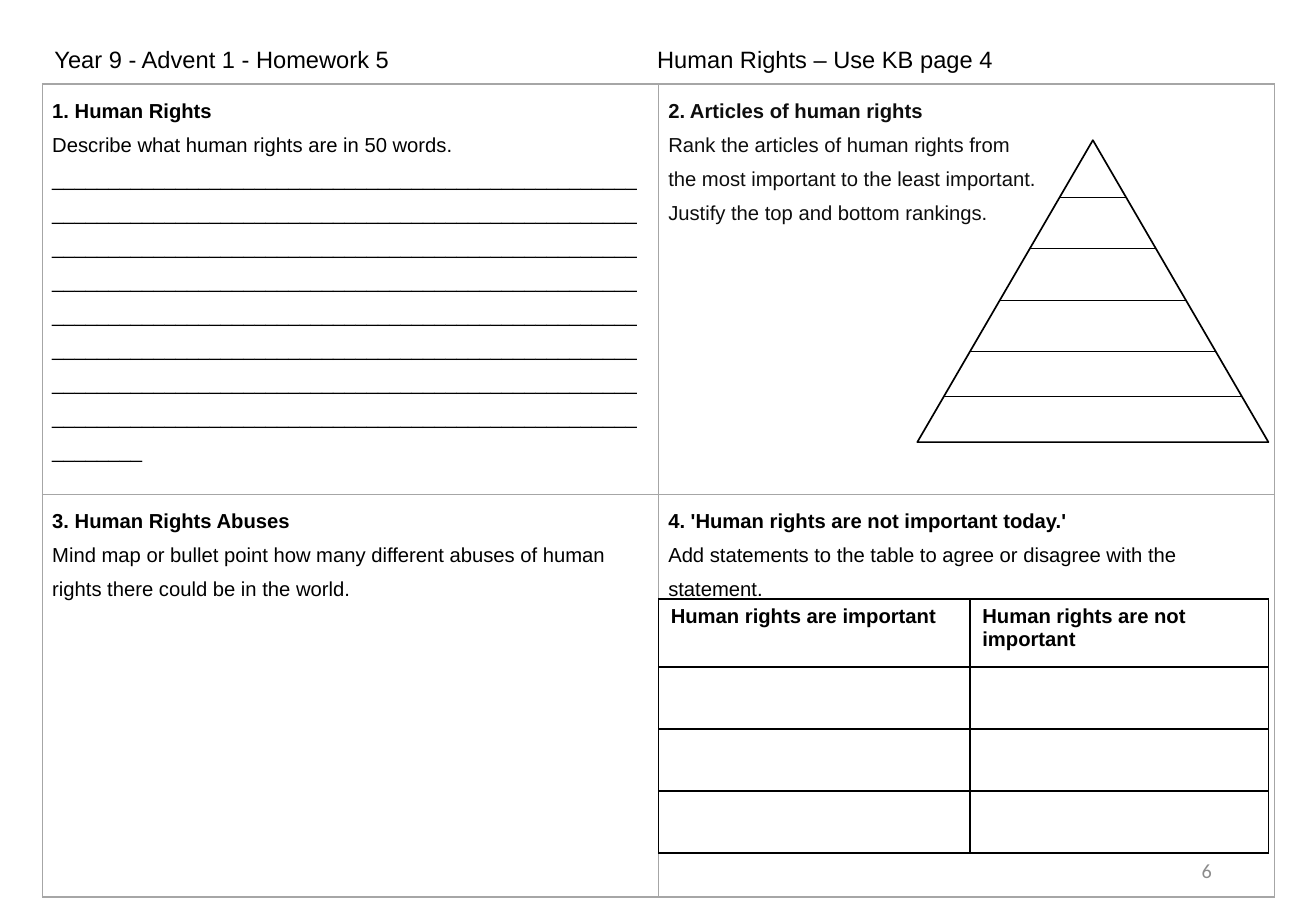
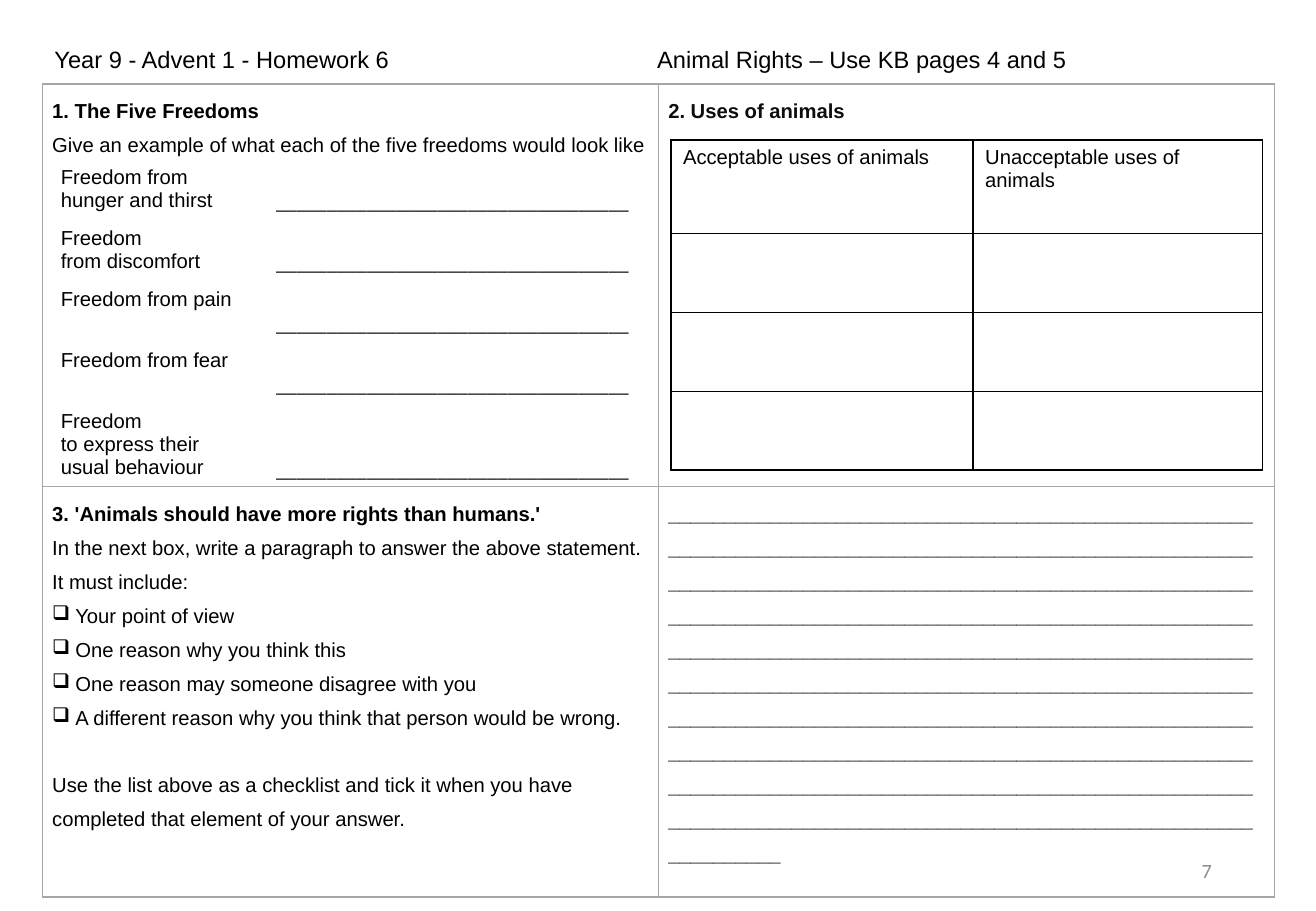
"""Builds two homework sheets, each a two-by-two grid of tasks."""
from lxml import etree
from pptx import Presentation
from pptx import util as u
from pptx.dml.color import RGBColor
from pptx.enum import shapes, text
from pptx.oxml.ns import qn

PAGE_W, PAGE_H = 10.83, 7.5
SHEET = (0.35, 0.69, 10.14, 6.63)
BLACK, INK, WHITE, GRID, MUTED = "000000", "0D0D0D", "FFFFFF", "A6A6A6", "8C8C8C"
NO_STYLE = "{2D5ABB26-0587-4C30-8999-92F81FD0307C}"
NBSP = chr(160)
TASK_MARGINS = (0.08, 0.04)


def rgb(value):
    """Turn a hex string into a colour."""
    return RGBColor.from_string(value)


def inches(*lengths):
    """Turn numbers into slide lengths."""
    return [u.Inches(length) for length in lengths]


def part(box, x, y, w, h):
    """Return the box found at the given shares of another box."""
    left, top, width, height = box
    return left + x * width, top + y * height, w * width, h * height


def quarter(col, row):
    """Return one task box of the sheet."""
    return part(SHEET, col / 2, row / 2, 0.5, 0.5)


def add_child(parent, tag, **attributes):
    """Append one DrawingML element."""
    child = etree.SubElement(parent, qn(tag))
    for key, value in attributes.items():
        child.set(key, str(value))
    return child


def write(frame, content, size=12, font="Arial", color=BLACK, bold=False, spacing=None,
          align=None, before=0, bullet=None, tab=None):
    """Add one formatted paragraph to a text frame."""
    para = frame.paragraphs[0]
    if para.runs:
        para = frame.add_paragraph()
    para.alignment = align
    para.line_spacing = spacing
    if before:
        para.space_before = u.Pt(before)
    props = para._p.get_or_add_pPr()
    if bullet:
        indent = u.Inches(0.19)
        props.set("marL", str(indent))
        props.set("indent", str(-indent))
        add_child(props, "a:buChar", char=bullet)
    if tab:
        stops = add_child(props, "a:tabLst")
        add_child(stops, "a:tab", pos=u.Inches(tab), algn="l")
    for index, line in enumerate(content.split("\n")):
        if index:
            para.add_line_break()
        run = para.add_run()
        run.text = line
        run.font.size = u.Pt(size)
        run.font.name = font
        run.font.bold = bold
        run.font.color.rgb = rgb(color)


def set_borders(cell, color):
    """Draw the four sides of a cell, or clear them when no colour is given."""
    props = cell._tc.get_or_add_tcPr()
    for index, side in enumerate(("a:lnL", "a:lnR", "a:lnT", "a:lnB")):
        line = add_child(props, side, w=u.Pt(1))
        props.insert(index, line)
        if color:
            add_child(add_child(line, "a:solidFill"), "a:srgbClr", val=color)
        else:
            add_child(line, "a:noFill")


def add_grid(slide, box, cols, rows, border=None, margins=(0.1, 0.05)):
    """Add an unfilled table whose columns and rows share the box by weight."""
    table = slide.shapes.add_table(len(rows), len(cols), *inches(*box)).table
    table.first_row = table.horz_banding = False
    table._tbl.tblPr[0].text = NO_STYLE
    for tracks, weights, field, length in ((table.columns, cols, "width", box[2]),
                                           (table.rows, rows, "height", box[3])):
        for track, weight in zip(tracks, weights):
            setattr(track, field, u.Inches(length * weight / sum(weights)))
    for cell in table.iter_cells():
        cell.margin_left = cell.margin_right = u.Inches(margins[0])
        cell.margin_top = cell.margin_bottom = u.Inches(margins[1])
        cell.fill.background()
        set_borders(cell, border)
    return table


def add_header(slide, box, homework, topic):
    """Add the white band with the homework name and its topic."""
    band = slide.shapes.add_shape(shapes.MSO_SHAPE.RECTANGLE, *inches(*box))
    band.shadow.inherit = False
    band.fill.solid()
    band.fill.fore_color.rgb = rgb(WHITE)
    band.line.fill.background()
    band.text_frame.word_wrap = True
    band.text_frame.vertical_anchor = text.MSO_ANCHOR.TOP
    write(band.text_frame, f"{homework}\t{topic}", size=14, spacing=1.5,
          align=text.PP_ALIGN.LEFT, tab=4.96)


def add_page_number(slide, box, number):
    """Add the page number at the foot of the sheet."""
    frame = slide.shapes.add_textbox(*inches(*box)).text_frame
    frame.word_wrap = True
    frame.vertical_anchor = text.MSO_ANCHOR.MIDDLE
    write(frame, str(number), font="Calibri", color=MUTED, align=text.PP_ALIGN.RIGHT)


def add_sheet(deck, number, homework, topic, tasks):
    """Add a slide with its header, page number and four tasks."""
    slide = deck.slides.add_slide(deck.slide_layouts[6])
    page = (0, 0, PAGE_W, PAGE_H)
    add_page_number(slide, part(page, 0.71, 0.93, 0.22, 0.05), number)
    add_header(slide, (SHEET[0], 0.2, 10.36, 0.44), homework, topic)
    table = add_grid(slide, SHEET, (1, 1), (1, 1), GRID, TASK_MARGINS)
    for cell, paragraphs in zip(table.iter_cells(), tasks):
        for content, style in paragraphs:
            write(cell.text_frame, content, spacing=1.5, **style)
    return slide


def add_pyramid(slide, box, levels):
    """Add a triangle cut by level lines at shares of its height."""
    left, top, width, height = box
    triangle = slide.shapes.add_shape(shapes.MSO_SHAPE.ISOSCELES_TRIANGLE, *inches(*box))
    triangle.shadow.inherit = False
    triangle.fill.solid()
    triangle.fill.fore_color.rgb = rgb(WHITE)
    triangle.line.color.rgb = rgb(BLACK)
    triangle.line.width = u.Pt(1)
    middle = left + width / 2
    for level in levels:
        reach, y = level * width / 2, top + level * height
        rung = slide.shapes.add_connector(shapes.MSO_CONNECTOR.STRAIGHT,
                                          *inches(middle - reach, y, middle + reach, y))
        rung.line.color.rgb = rgb(BLACK)
        rung.line.width = u.Pt(0.5)
        add_child(rung._element.spPr, "a:effectLst")


def add_answer_table(slide, box, headings, rows, bold=False):
    """Add a two-column table with headings and empty answer rows."""
    table = add_grid(slide, box, (2.57, 2.46), rows, BLACK)
    for col, heading in enumerate(headings):
        write(table.cell(0, col).text_frame, heading, bold=bold)


def add_freedoms(slide, box, freedoms):
    """Add the freedoms, each beside a line to write on."""
    table = add_grid(slide, box, (1.78, 3.21), (0.5, 0.5, 0.5, 0.5, 0.64))
    for row, freedom in enumerate(freedoms):
        write(table.cell(row, 0).text_frame, freedom)
        answer = table.cell(row, 1)
        answer.vertical_anchor = text.MSO_ANCHOR.BOTTOM
        write(answer.text_frame, "_" * 35, font="Calibri", spacing=1.5)


def human_rights(deck):
    """Build the sheet on human rights."""
    head, ink = {"bold": True}, {"color": INK}
    slide = add_sheet(deck, 6, "Year 9 - Advent 1 - Homework 5", "Human Rights – Use KB page 4", [
        [("1. Human Rights", head),
         ("Describe what human rights are in 50 words.", {}),
         ("_" * 424, {})],
        [("2. Articles of human rights", head | ink),
         ("Rank the articles of human rights from \nthe most important to the least important.", ink),
         ("Justify the top and bottom rankings.", ink)],
        [("3. Human Rights Abuses", head),
         ("Mind map or bullet point how many different abuses of human rights "
          "there could be in the world.", {})],
        [("4. 'Human rights are not important today.'", head),
         ("Add statements to the table to agree or disagree with the statement.", {})],
    ])
    add_pyramid(slide, part(quarter(1, 0), 0.42, 0.14, 0.57, 0.75),
                (0.19, 0.36, 0.53, 0.7, 0.85))
    add_answer_table(slide, part(quarter(1, 1), 0, 0.28, 0.99, 0.63),
                     ("Human rights are important", "Human rights are not important"),
                     (0.56, 0.51, 0.51, 0.51), bold=True)


def animal_rights(deck):
    """Build the sheet on animal rights."""
    head, check = {"bold": True}, {"bullet": "❑"}
    slide = add_sheet(deck, 7, "Year 9 - Advent 1 - Homework 6",
                      "Animal Rights – Use KB pages 4 and 5", [
        [("1. The Five Freedoms", head),
         ("Give an example of what each of the five freedoms would look like", {})],
        [("2. Uses of animals", head | {"color": INK})],
        [("3. 'Animals should have more rights than humans.'", head),
         ("In the next box, write a paragraph to answer the above statement.", {}),
         ("It must include:", {}),
         ("Your point of view", check),
         ("One reason why you think this", check),
         ("One reason may someone disagree with you", check),
         ("A different reason why you think that person would be wrong.", check),
         ("Use the list above as a checklist and tick it when you have completed "
          "that element of your answer.", {"before": 20})],
        [("_" * 530, head)],
    ])
    add_answer_table(slide, part(quarter(1, 0), 0.02, 0.14, 0.96, 0.82),
                     ("Acceptable uses of animals", "Unacceptable uses of animals"),
                     (0.77, 0.65, 0.65, 0.65))
    add_freedoms(slide, part(quarter(0, 0), 0.01, 0.19, 0.98, 0.8), (
        "Freedom from hunger and thirst",
        f"Freedom from{NBSP}discomfort",
        f"Freedom from{NBSP}pain",
        f"Freedom from{NBSP}fear",
        f"Freedom to{NBSP}express{NBSP}their usual{NBSP}behaviour"))


def main():
    """Build and save the homework sheets."""
    deck = Presentation()
    deck.slide_width, deck.slide_height = inches(PAGE_W, PAGE_H)
    human_rights(deck)
    animal_rights(deck)
    deck.save("out.pptx")


if __name__ == "__main__":
    main()
